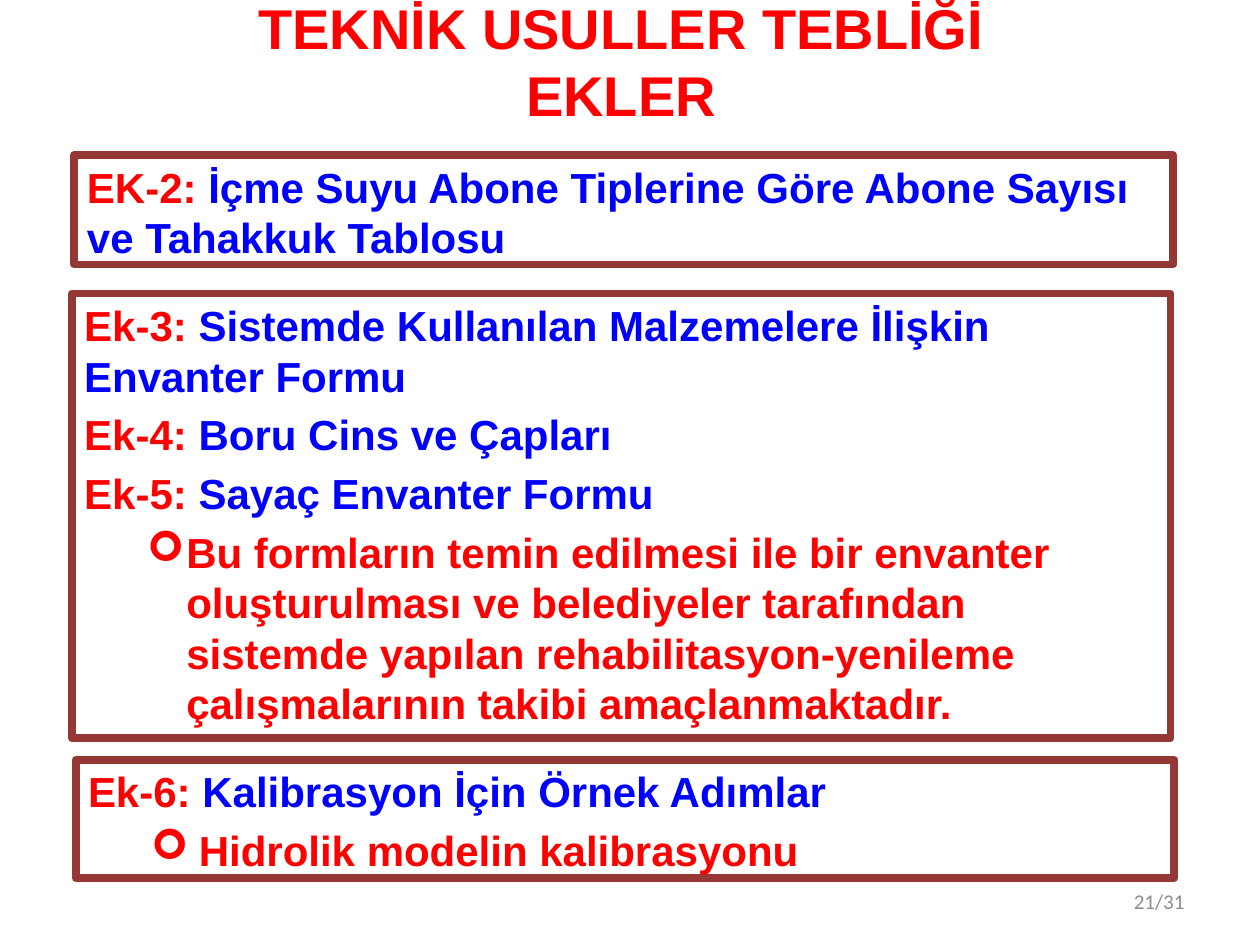
from lxml import etree
from pptx import Presentation
from pptx.dml.color import RGBColor
from pptx.enum.shapes import MSO_SHAPE
from pptx.enum.text import MSO_ANCHOR, MSO_AUTO_SIZE, PP_ALIGN
from pptx.oxml.ns import qn
from pptx.util import Inches, Pt

RECTANGLE = MSO_SHAPE.RECTANGLE
TOP, MIDDLE = MSO_ANCHOR.TOP, MSO_ANCHOR.MIDDLE
LEFT, CENTER, RIGHT = PP_ALIGN.LEFT, PP_ALIGN.CENTER, PP_ALIGN.RIGHT
NO_AUTOFIT = MSO_AUTO_SIZE.NONE

RED, BLUE, BROWN, GRAY = "FF0000", "0000FF", "953735", "8C8C8C"
BOX_WIDTH = 8.72
BODY_SIZE = 24


def color(value):
    return RGBColor.from_string(value)


def place(shape, left, top, width, height):
    shape.left, shape.top = Inches(left), Inches(top)
    shape.width, shape.height = Inches(width), Inches(height)


def prepare_frame(shape, anchor):
    frame = shape.text_frame
    frame.word_wrap = True
    frame.auto_size = NO_AUTOFIT
    frame.vertical_anchor = anchor
    return frame


def add_span(para, text, size, hue, font="Arial", bold=True):
    span = para.add_run()
    span.text = text
    span.font.name, span.font.size, span.font.bold = font, Pt(size), bold
    span.font.color.rgb = color(hue)


def add_para(frame, align, gap=0):
    """Reuse the empty first paragraph, or add one with a gap before it."""
    first = not frame.paragraphs[0].runs
    para = frame.paragraphs[0] if first else frame.add_paragraph()
    para.alignment = align
    para.space_before = Pt(0 if first else gap)
    return para


def add_arrow_bullet(para, indent, hanging):
    para.level = 1
    properties = para._p.get_or_add_pPr()
    properties.set("marL", str(Inches(indent)))
    properties.set("indent", str(-Inches(hanging)))
    bullet_color = etree.SubElement(properties, qn("a:buClr"))
    etree.SubElement(bullet_color, qn("a:srgbClr"), val=RED)
    etree.SubElement(properties, qn("a:buFont"), typeface="Wingdings")
    etree.SubElement(properties, qn("a:buChar"), char="➢")


def fill_annex_box(box, annexes, note=None, indent=0, hanging=0):
    """Frame the box and list its annexes, with an optional bulleted note."""
    box.line.color.rgb = color(BROWN)
    box.line.width = Pt(4.5)
    frame = prepare_frame(box, TOP)
    gap = BODY_SIZE * 0.2
    for label, name in annexes:
        para = add_para(frame, LEFT, gap)
        add_span(para, f"{label}: ", BODY_SIZE, RED)
        add_span(para, name, BODY_SIZE, BLUE)
    if note:
        para = add_para(frame, LEFT, gap)
        add_arrow_bullet(para, indent, hanging)
        add_span(para, note, BODY_SIZE, RED)


def add_annex_box(page, left, top, height, *content):
    box = page.shapes.add_shape(RECTANGLE, Inches(left), Inches(top),
                                Inches(BOX_WIDTH), Inches(height))
    box.shadow.inherit = False
    box.fill.background()
    fill_annex_box(box, *content)


def set_title(page, lines):
    title = page.shapes.title
    place(title, 0.43, -0.03, 9, 1.02)
    frame = prepare_frame(title, MIDDLE)
    for line in lines:
        add_span(add_para(frame, CENTER), line, 32, RED)


def add_page_number(page, text):
    box = page.shapes.add_textbox(Inches(7.17), Inches(6.95),
                                  Inches(2.33), Inches(0.4))
    para = add_para(prepare_frame(box, MIDDLE), RIGHT)
    add_span(para, text, 12, GRAY, font="Calibri", bold=False)


def main():
    deck = Presentation()
    deck.slide_width, deck.slide_height = Inches(10), Inches(7.5)
    page = deck.slides.add_slide(deck.slide_layouts[0])

    set_title(page, ["TEKNİK USULLER TEBLİĞİ", "EKLER"])

    subtitle = page.placeholders[1]
    place(subtitle, 0.59, 1.23, BOX_WIDTH, 0.87)
    fill_annex_box(subtitle, [
        ("EK-2", "İçme Suyu Abone Tiplerine Göre Abone Sayısı ve Tahakkuk Tablosu"),
    ])

    add_annex_box(page, 0.57, 2.33, 3.53, [
        ("Ek-3", "Sistemde Kullanılan Malzemelere İlişkin Envanter Formu"),
        ("Ek-4", "Boru Cins ve Çapları"),
        ("Ek-5", "Sayaç Envanter Formu"),
    ], "Bu formların temin edilmesi ile bir envanter oluşturulması ve "
       "belediyeler tarafından sistemde yapılan rehabilitasyon-yenileme "
       "çalışmalarının takibi amaçlanmaktadır.", 0.81, 0.31)

    add_annex_box(page, 0.6, 6.03, 0.94, [
        ("Ek-6", "Kalibrasyon İçin Örnek Adımlar"),
    ], "Hidrolik modelin kalibrasyonu", 0.88, 0.38)

    add_page_number(page, "21/31")
    deck.save("out.pptx")


if __name__ == "__main__":
    main()
